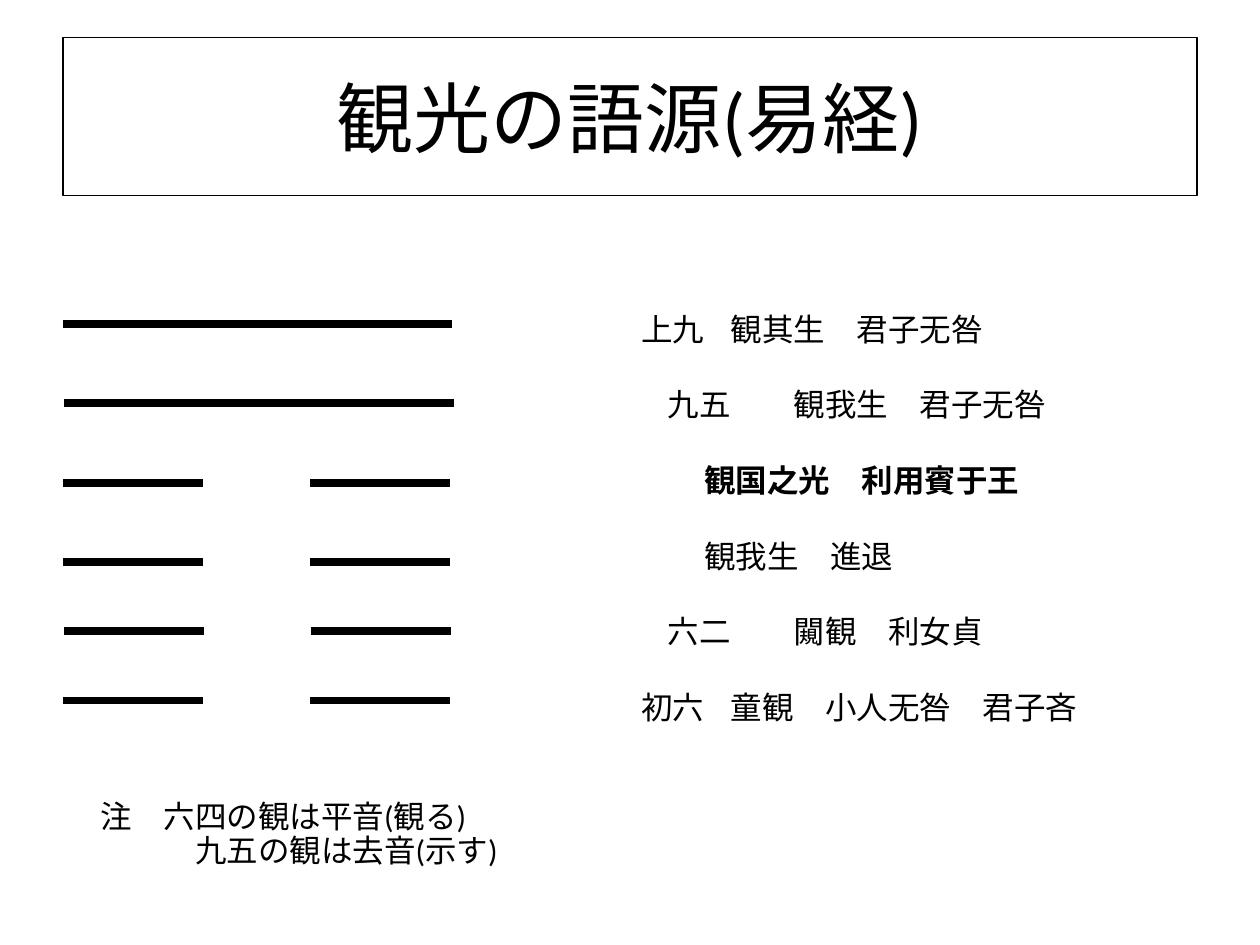
from dataclasses import dataclass
from lxml import etree
from pptx import Presentation
from pptx.dml.color import RGBColor
from pptx.enum.lang import MSO_LANGUAGE_ID
from pptx.enum.shapes import MSO_CONNECTOR, MSO_SHAPE
from pptx.enum.text import MSO_ANCHOR, PP_ALIGN
from pptx.oxml.ns import qn
from pptx.util import Inches, Pt

JAPANESE = MSO_LANGUAGE_ID.JAPANESE
STRAIGHT, RECT = MSO_CONNECTOR.STRAIGHT, MSO_SHAPE.RECTANGLE
MIDDLE, TOP = MSO_ANCHOR.MIDDLE, MSO_ANCHOR.TOP
CENTER, LEFT = PP_ALIGN.CENTER, PP_ALIGN.LEFT


@dataclass(frozen=True)
class Theme:
    ink: RGBColor = RGBColor(0, 0, 0)
    font: str = "Calibri"
    title: Pt = Pt(44)
    body: Pt = Pt(18)
    frame: Pt = Pt(0.75)
    bar: Pt = Pt(4.5)


theme = Theme()


def add_text(p, text, size, bold=False, **layout):
    """Write one run and apply the paragraph's format values."""
    for name, value in layout.items():
        setattr(p, name, value)
    r = p.add_run()
    r.text = text
    for name, value in dict(name=theme.font, size=size, bold=bold,
                            language_id=JAPANESE).items():
        setattr(r.font, name, value)
    r.font.color.rgb = theme.ink


def set_indent(p, first, tab=None):
    """Indent the first line and set an optional tab stop, in inches."""
    pPr = p._p.get_or_add_pPr()
    pPr.set("marL", "0")
    pPr.set("indent", str(Inches(first)))
    if tab:
        tabs = etree.SubElement(pPr, qn("a:tabLst"))
        etree.SubElement(tabs, qn("a:tab"), pos=str(Inches(tab)), algn="l")


prs = Presentation()
prs.slide_width, prs.slide_height = Inches(10), Inches(7.5)
slide = prs.slides.add_slide(prs.slide_layouts[6])
margin = 0.5

# Framed title
sp = slide.shapes.add_shape(RECT, Inches(margin), Inches(0.3),
                            Inches(10 - 2 * margin), Inches(1.25))
sp.shadow.inherit = False
sp.fill.background()
sp.line.color.rgb = theme.ink
sp.line.width = theme.frame
tf = sp.text_frame
tf.vertical_anchor = MIDDLE
add_text(tf.paragraphs[0], "観光の語源(易経)", theme.title, alignment=CENTER)

# Hexagram: unbroken and broken bars as (offset, length)
unbroken = [(0, 3.09)]
broken = [(0, 1.11), (1.96, 1.11)]
hexagram = [
    (2.57, 0, unbroken),
    (3.20, 0.01, unbroken),
    (3.83, 0, broken),
    (4.46, 0, broken),
    (5.01, 0.01, broken),
    (5.56, 0, broken),
]
for y, shift, bars in hexagram:
    for offset, length in bars:
        x = margin + shift + offset
        bar = slide.shapes.add_connector(STRAIGHT, Inches(x), Inches(y),
                                         Inches(x + length), Inches(y))
        bar.line.color.rgb = theme.ink
        bar.line.width = theme.bar
        etree.SubElement(bar._element.spPr, qn("a:effectLst"))

# Line statements and note: rows of (text, first indent, tab stop, bold)
statements = [
    ("上九\t観其生　君子无咎", 0.29, 1.29, False),
    ("九五\t観我生　君子无咎", 0.5, 1.5, False),
    ("観国之光　利用賓于王", 0.79, None, True),
    ("観我生　進退", 0.79, None, False),
    ("六二\t闚観　利女貞", 0.5, 1.5, False),
    ("初六\t童観　小人无咎　君子吝", 0.29, 1.29, False),
]
note = [
    ("注\t六四の観は平音(観る)", 0, 0.56, False),
    ("九五の観は去音(示す)", 0.75, None, False),
]
blocks = [
    ((4.7, 2.41, 4.8, 3.4), MIDDLE, statements, 1.0, Pt(21.6)),
    ((0.7, 6.31, 5, 0.65), TOP, note, 0.9, Pt(0)),
]
for box, anchor, rows, spacing, gap in blocks:
    tf = slide.shapes.add_textbox(*map(Inches, box)).text_frame
    tf.word_wrap = True
    tf.vertical_anchor = anchor
    for i, (text, first, tab, bold) in enumerate(rows):
        p = tf.add_paragraph() if i else tf.paragraphs[0]
        add_text(p, text, theme.body, bold, alignment=LEFT,
                 line_spacing=spacing, space_before=gap if i else Pt(0))
        set_indent(p, first, tab)

prs.save("out.pptx")
